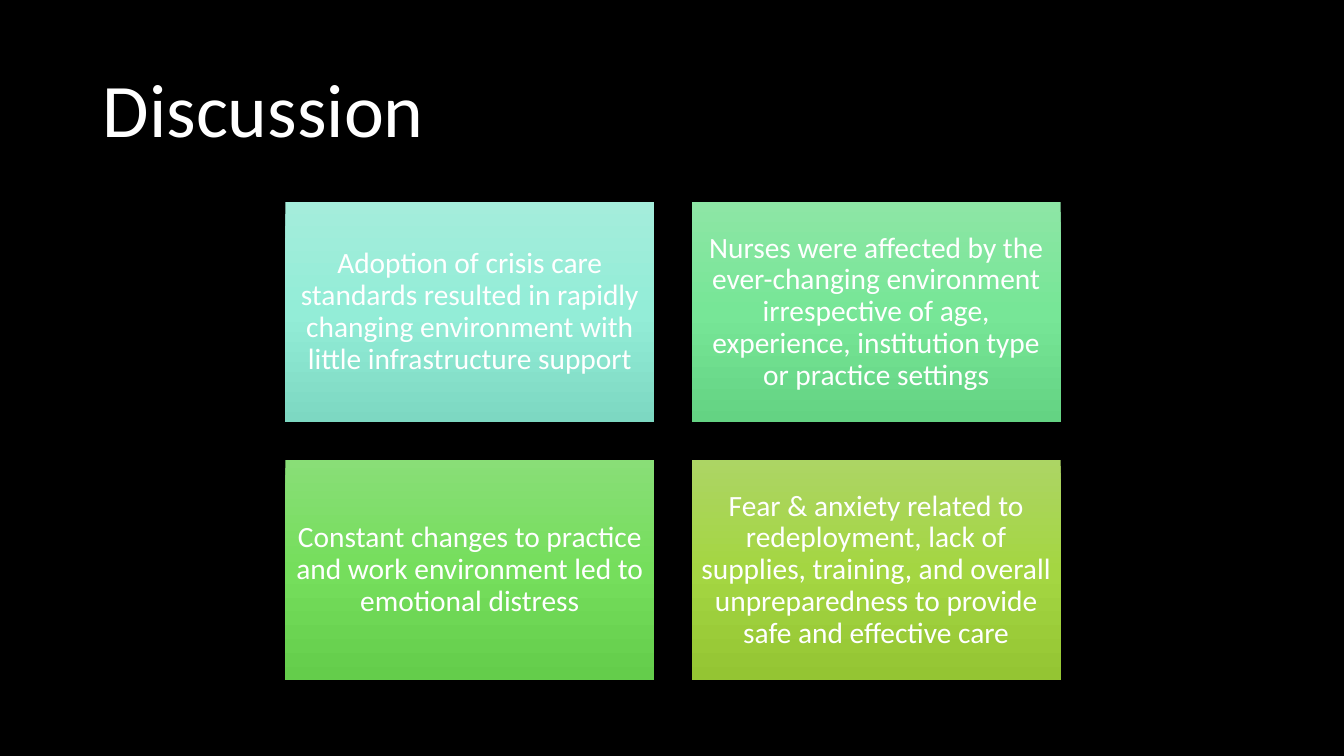
from copy import deepcopy

from pptx import Presentation
from pptx.dml.color import RGBColor
from pptx.enum.shapes import MSO_SHAPE as Shape
from pptx.enum.text import MSO_ANCHOR as Anchor, PP_ALIGN as Align
from pptx.util import Inches, Pt

BLACK = RGBColor(0x00, 0x00, 0x00)
WHITE = RGBColor(0xFF, 0xFF, 0xFF)
AQUA = [RGBColor(0xA4, 0xED, 0xDB), RGBColor(0x93, 0xED, 0xD7), RGBColor(0x7D, 0xD8, 0xC2)]
MINT = [RGBColor(0x8D, 0xE6, 0xA5), RGBColor(0x77, 0xE6, 0x97), RGBColor(0x64, 0xD3, 0x83)]
GREEN = [RGBColor(0x89, 0xDE, 0x77), RGBColor(0x75, 0xDE, 0x5C), RGBColor(0x64, 0xCD, 0x4B)]
LIME = [RGBColor(0xAC, 0xD5, 0x64), RGBColor(0xA4, 0xD6, 0x42), RGBColor(0x94, 0xC5, 0x33)]

FINDINGS = [
    ("Adoption of crisis care standards resulted in rapidly changing environment "
     "with little infrastructure support", AQUA),
    ("Nurses were affected by the ever-changing environment irrespective of age, "
     "experience, institution type or practice settings", MINT),
    ("Constant changes to practice and work environment led to emotional distress", GREEN),
    ("Fear & anxiety related to redeployment, lack of supplies, training, and overall "
     "unpreparedness to provide safe and effective care", LIME),
]
COLUMNS = 2
GRID_LEFT, GRID_TOP = 2.83, 2
CARD_WIDTH, CARD_HEIGHT = 3.66, 2.19
GAP = 0.37


def write(box, text, size):
    frame = box.text_frame
    frame.word_wrap = True
    frame.vertical_anchor = Anchor.MIDDLE
    paragraph = frame.paragraphs[0]
    paragraph.text = text
    paragraph.line_spacing = 0.9
    paragraph.font.name = "Calibri"
    paragraph.font.size = Pt(size)
    paragraph.font.color.rgb = WHITE
    return frame


def fill_downward(fill, colors):
    """Fill with an evenly spaced gradient from top to bottom."""
    fill.gradient()
    fill.gradient_angle = 270
    stop_list = fill._fill._gradFill.gsLst
    stop_list.insert(1, deepcopy(stop_list[0]))
    for index, (stop, color) in enumerate(zip(fill.gradient_stops, colors)):
        stop.position = index / (len(colors) - 1)
        stop.color.rgb = color


prs = Presentation()
prs.slide_width, prs.slide_height = Inches(13.33), Inches(7.5)
slide = prs.slides.add_slide(prs.slide_layouts[6])
slide.background.fill.solid()
slide.background.fill.fore_color.rgb = BLACK

title = slide.shapes.add_textbox(Inches(0.92), Inches(0.4), Inches(11.5), Inches(1.45))
write(title, "Discussion", 54)

for index, (finding, colors) in enumerate(FINDINGS):
    row, column = divmod(index, COLUMNS)
    card = slide.shapes.add_shape(
        Shape.RECTANGLE,
        Inches(GRID_LEFT + column * (CARD_WIDTH + GAP)),
        Inches(GRID_TOP + row * (CARD_HEIGHT + GAP)),
        Inches(CARD_WIDTH), Inches(CARD_HEIGHT))
    card.shadow.inherit = False
    card.line.fill.background()
    fill_downward(card.fill, colors)
    frame = write(card, finding, 21)
    frame.margin_left = frame.margin_right = Inches(0.09)
    frame.margin_top = frame.margin_bottom = Inches(0.09)
    frame.paragraphs[0].alignment = Align.CENTER

prs.save("out.pptx")
